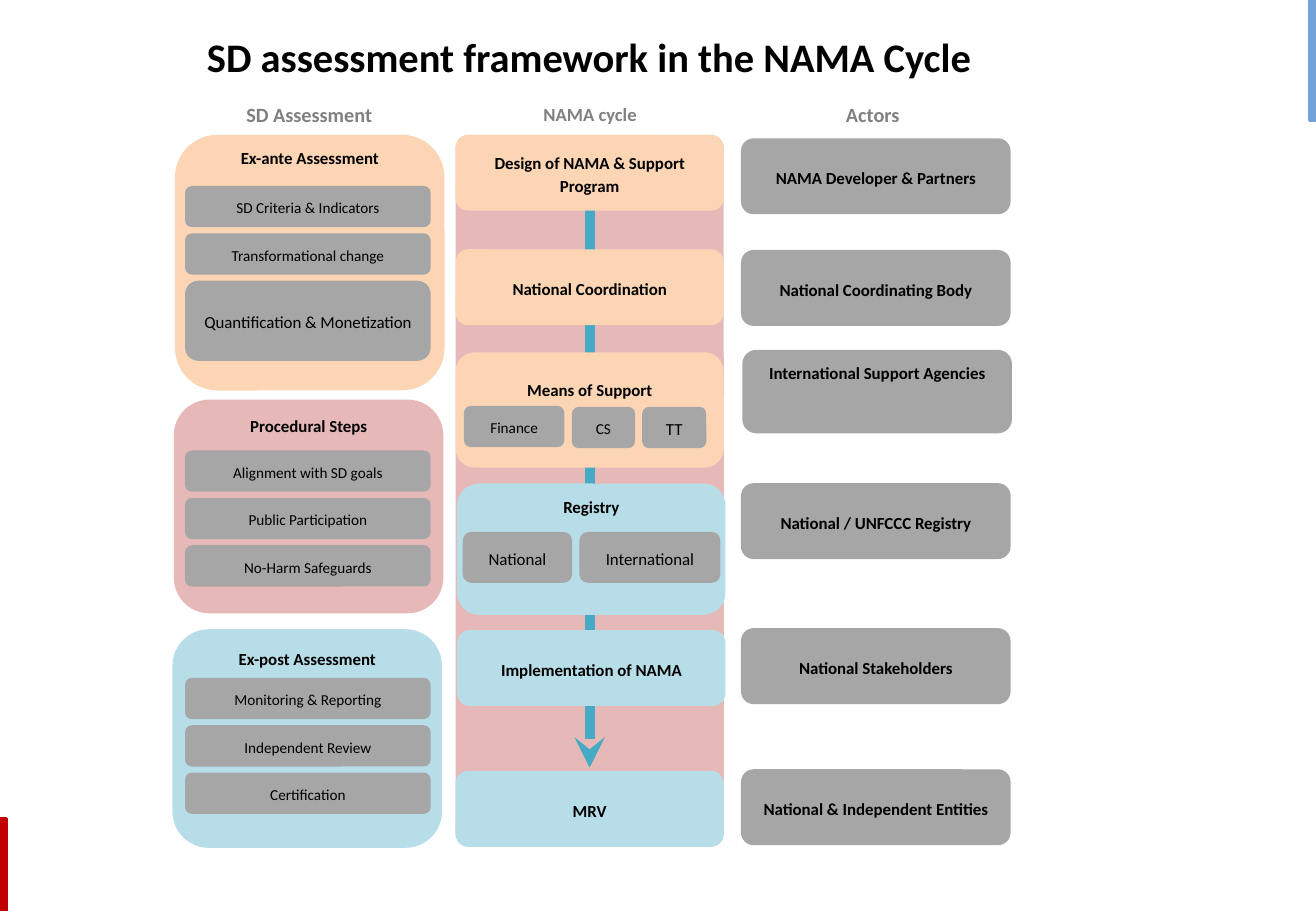
from lxml import etree
from pptx import Presentation
from pptx import util as u
from pptx.dml.color import RGBColor
from pptx.enum import shapes, text
from pptx.oxml.ns import qn

BLACK = RGBColor(0x00, 0x00, 0x00)
HEADER_GREY = RGBColor(0x80, 0x80, 0x80)
BOX_GREY = RGBColor(0xA6, 0xA6, 0xA6)
ORANGE = RGBColor(0xFC, 0xD5, 0xB5)
PINK = RGBColor(0xE6, 0xB9, 0xB8)
LIGHT_BLUE = RGBColor(0xB7, 0xDE, 0xE8)
ARROW_BLUE = RGBColor(0x46, 0xAA, 0xC5)
EDGE_BLUE = RGBColor(0x72, 0xA3, 0xD8)
EDGE_RED = RGBColor(0xC0, 0x00, 0x00)


class Diagram:
    """Holds the style and the current slide; lengths are in points."""

    font = "Calibri"

    def __init__(self, slide):
        self.slide = slide

    def add_wording(self, shape, wording, size, bold, color=BLACK, spacing=1.15):
        frame = shape.text_frame
        frame.word_wrap = True
        paragraph = frame.paragraphs[0]
        paragraph.alignment = text.PP_ALIGN.CENTER
        paragraph.line_spacing = spacing
        run = paragraph.add_run()
        run.text = wording
        run.font.name = self.font
        run.font.size = u.Pt(size)
        run.font.bold = bold
        run.font.color.rgb = color

    def label(self, left, top, width, height, wording, size, color=BLACK, spacing=1.15):
        shape = self.slide.shapes.add_textbox(*map(u.Pt, (left, top, width, height)))
        shape.text_frame.vertical_anchor = text.MSO_ANCHOR.MIDDLE
        self.add_wording(shape, wording, size, True, color, spacing)

    def block(self, left, top, width, height, fill,
              kind=shapes.MSO_SHAPE.ROUNDED_RECTANGLE):
        shape = self.slide.shapes.add_shape(kind, *map(u.Pt, (left, top, width, height)))
        shape.shadow.inherit = False
        shape.fill.solid()
        shape.fill.fore_color.rgb = fill
        shape.line.fill.background()
        return shape

    def box(self, left, top, width, height, fill, wording, size=10, bold=True):
        shape = self.block(left, top, width, height, fill)
        frame = shape.text_frame
        frame.margin_top = frame.margin_bottom = 0
        frame.vertical_anchor = text.MSO_ANCHOR.MIDDLE
        self.add_wording(shape, wording, size, bold)

    def panel(self, left, top, width, height, fill, heading, inset):
        """A box whose heading sits near its top edge."""
        shape = self.block(left, top, width, height, fill)
        shape.text_frame.margin_top = u.Pt(inset)
        shape.text_frame.margin_bottom = 0
        shape.text_frame.vertical_anchor = text.MSO_ANCHOR.TOP
        self.add_wording(shape, heading, 10, True, spacing=1.0)

    def edge(self, left, top, width, height, color):
        shape = self.block(left, top, width, height, color,
                           shapes.MSO_SHAPE.FLOWCHART_PROCESS)
        shape.line.color.rgb = color
        shape.line.width = u.Pt(2)

    def arrow(self, x, top, bottom, color, weight):
        connector = self.slide.shapes.add_connector(
            shapes.MSO_CONNECTOR.STRAIGHT, *map(u.Pt, (x, top, x, bottom)))
        connector.line.color.rgb = color
        connector.line.width = u.Pt(weight)
        properties = connector._element.spPr
        etree.SubElement(properties.find(qn("a:ln")), qn("a:tailEnd"), type="stealth")
        etree.SubElement(properties, qn("a:effectLst"))


def main():
    presentation = Presentation()
    presentation.slide_width = u.Pt(780)
    presentation.slide_height = u.Pt(540)
    slide = presentation.slides.add_slide(presentation.slide_layouts[6])
    diagram = Diagram(slide)

    # Edge marks and title
    diagram.edge(776.2, 0, 3.6, 71.3, EDGE_BLUE)
    diagram.edge(0, 485.3, 3.6, 54.7, EDGE_RED)
    diagram.label(43.2, 15.1, 612, 36, "SD assessment framework in the NAMA Cycle", 24,
                  spacing=1.0)

    # Column headers
    for left, header, size in ((103, "SD Assessment", 12), (269.5, "NAMA cycle", 11),
                               (437, "Actors", 12)):
        diagram.label(left, 51.1, 160.6, 31, header, size, HEADER_GREY)

    # SD assessment column: panels with evenly stepped items
    item_step, item_height = 28.1, 24.5
    panels = (
        (103.7, 79.9, 151.6, ORANGE, "Ex-ante Assessment", 0, 110.2,
         ("SD Criteria & Indicators", "Transformational change",
          "Quantification & Monetization")),
        (103, 236.9, 126.7, PINK, "Procedural Steps", 3.2, 267,
         ("Alignment with SD goals", "Public Participation", "No-Harm Safeguards")),
        (102.2, 373, 129.6, LIGHT_BLUE, "Ex-post Assessment", 5.1, 401.8,
         ("Monitoring & Reporting", "Independent Review", "Certification")),
    )
    for left, top, height, fill, heading, inset, first, items in panels:
        diagram.panel(left, top, 159.8, height, fill, heading, inset)
        for row, item in enumerate(items):
            large = item.startswith("Quantification")
            diagram.box(109.7, first + row * item_step, 145.6,
                        47.5 if large else item_height, BOX_GREY, item,
                        size=10 if large else 9, bold=False)

    # NAMA cycle column: backdrop, arrow, stages
    backdrop = diagram.block(270, 81.4, 159, 418.3, PINK)
    backdrop.adjustments[0] = 0.04
    diagram.arrow(349.5, 105, 455, ARROW_BLUE, 6)
    for left, top, fill, stage in (
            (270, 79.9, ORANGE, "Design of NAMA & Support Program"),
            (270, 147.8, ORANGE, "National Coordination"),
            (271, 373.5, LIGHT_BLUE, "Implementation of NAMA"),
            (270, 457, LIGHT_BLUE, "MRV")):
        diagram.box(left, top, 159, 45, fill, stage)
    diagram.panel(270, 208.8, 159, 68.4, ORANGE, "Means of Support", 12.9)
    diagram.panel(271, 286.6, 159, 77.8, LIGHT_BLUE, "Registry", 3.9)
    for left, top, width, height, part, size in (
            (275, 240.6, 59.5, 24.5, "Finance", 9),
            (338.9, 241.2, 37.5, 24.5, "CS", 9),
            (380.6, 241.2, 38, 24.5, "TT", 10),
            (274.3, 315.3, 64.8, 30.2, "National", 10),
            (343.4, 315.3, 83.6, 30.2, "International", 10)):
        diagram.box(left, top, width, height, BOX_GREY, part, size, bold=False)

    # Actors column
    for top, actor in ((82, "NAMA Developer & Partners"),
                       (148.2, "National Coordinating Body"),
                       (286.4, "National / UNFCCC Registry"),
                       (372.4, "National Stakeholders"),
                       (456, "National & Independent Entities")):
        diagram.box(439.2, top, 159.8, 45, BOX_GREY, actor)
    diagram.panel(440, 207.4, 159.8, 49.4, BOX_GREY, "International Support Agencies", 5.1)

    presentation.save("out.pptx")


if __name__ == "__main__":
    main()
